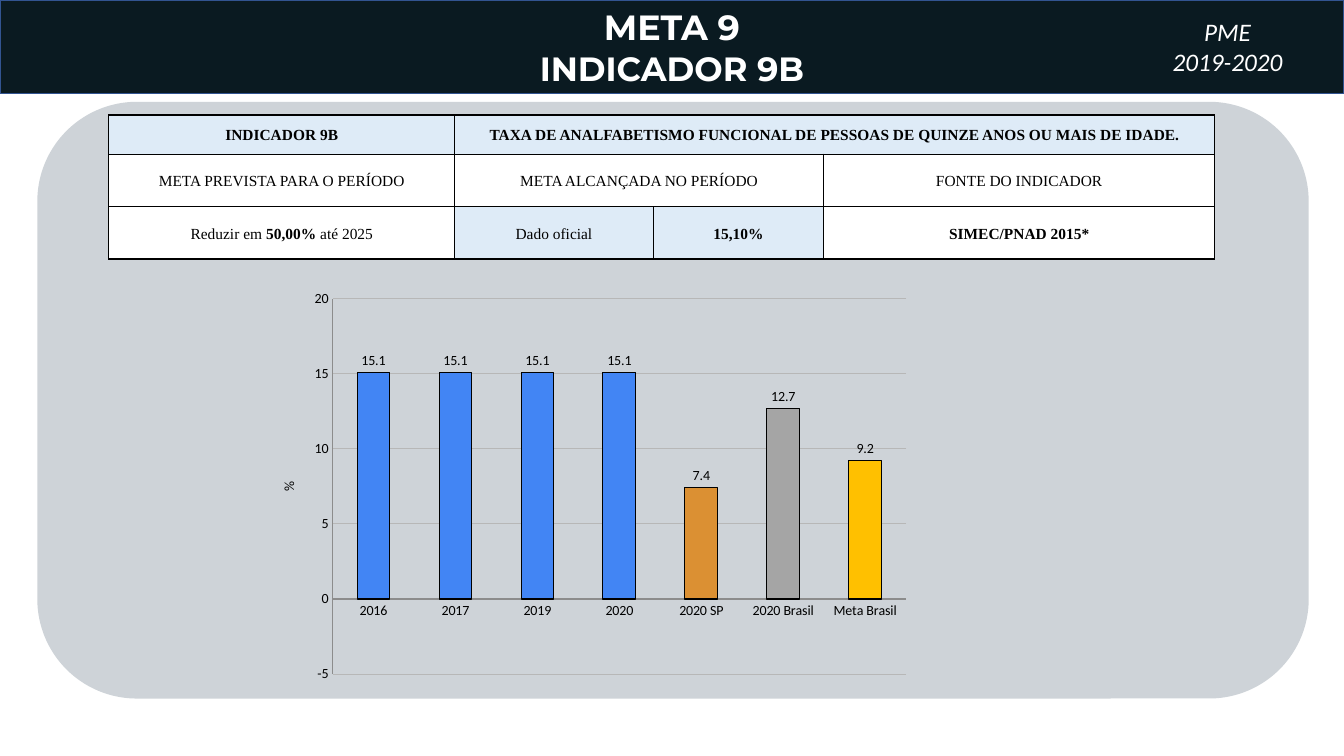
from lxml import etree
from pptx import Presentation
from pptx.chart.data import CategoryChartData
from pptx.dml.color import RGBColor
from pptx.enum.chart import XL_CHART_TYPE, XL_LABEL_POSITION, XL_TICK_MARK
from pptx.enum.shapes import MSO_SHAPE
from pptx.enum.text import MSO_ANCHOR, MSO_AUTO_SIZE, PP_ALIGN
from pptx.oxml import parse_xml
from pptx.oxml.ns import nsdecls, qn
from pptx.util import Inches, Pt

CENTER = PP_ALIGN.CENTER
MIDDLE = MSO_ANCHOR.MIDDLE
NO_TICK = XL_TICK_MARK.NONE
BLACK, WHITE, PALE_BLUE = "000000", "FFFFFF", "DEEBF7"


def paint(color_format, hex_color):
    color_format.rgb = RGBColor.from_string(hex_color)


def style_font(font, color, **values):
    for attribute, value in values.items():
        setattr(font, attribute, value)
    paint(font.color, color)


prs = Presentation()
prs.slide_width, prs.slide_height = Inches(13.33), Inches(7.5)
slide = prs.slides.add_slide(prs.slide_layouts[5])

# Header band with the title
header = slide.shapes.title
header.left, header.top = Inches(0), Inches(0)
header.width, header.height = Inches(13.33), Inches(0.93)
header.fill.solid()
paint(header.fill.fore_color, "0A1A21")
paint(header.line.color, "325491")
header.line.width = Pt(1)
heading = header.text_frame
heading.text = "META 9\nINDICADOR 9B"
heading.auto_size = MSO_AUTO_SIZE.NONE
heading.vertical_anchor = MIDDLE
for line, size in zip(heading.paragraphs, (25, 24)):
    line.alignment = CENTER
    style_font(line.runs[0].font, WHITE, name="Montserrat", size=Pt(size), bold=True)

# Grey panel
panel = slide.shapes.add_shape(MSO_SHAPE.ROUNDED_RECTANGLE, Inches(0.37), Inches(1.01),
                               Inches(12.61), Inches(5.92))
panel.shadow.inherit = False
panel.fill.solid()
paint(panel.fill.fore_color, "CED3D8")
panel.line.fill.background()

# Indicator table: (row, column, columns spanned, fill, runs as (text, bold))
indicator_cells = [
    (0, 0, 1, PALE_BLUE, [("INDICADOR 9B", True)]),
    (0, 1, 3, PALE_BLUE, [("TAXA DE ANALFABETISMO FUNCIONAL DE PESSOAS DE QUINZE ANOS "
                           "OU MAIS DE IDADE.", True)]),
    (1, 0, 1, WHITE, [("META PREVISTA PARA O PERÍODO", False)]),
    (1, 1, 2, WHITE, [("META ALCANÇADA NO PERÍODO", False)]),
    (1, 3, 1, WHITE, [("FONTE DO INDICADOR", False)]),
    (2, 0, 1, WHITE, [("Reduzir em ", False), ("50,00% ", True), ("até 2025", False)]),
    (2, 1, 1, PALE_BLUE, [("Dado oficial", False)]),
    (2, 2, 1, PALE_BLUE, [("15,10%", True)]),
    (2, 3, 1, WHITE, [("SIMEC/PNAD 2015*", True)]),
]
column_widths, row_heights = (3.43, 1.97, 1.69, 3.88), (0.39, 0.52, 0.52)
indicator = slide.shapes.add_table(3, 4, Inches(1.08), Inches(1.14),
                                   Inches(10.97), Inches(1.43)).table
indicator.first_row = indicator.horz_banding = False
for column, width in zip(indicator.columns, column_widths):
    column.width = Inches(width)
for row, height in zip(indicator.rows, row_heights):
    row.height = Inches(height)

for row, column, span, fill, runs in indicator_cells:
    cell = indicator.cell(row, column)
    if span > 1:
        cell.merge(indicator.cell(row, column + span - 1))
    cell.fill.solid()
    paint(cell.fill.fore_color, fill)
    cell.vertical_anchor = MIDDLE
    cell.margin_left = cell.margin_right = Inches(0.05)
    cell.margin_top, cell.margin_bottom = Inches(0.01), Inches(0)
    entry = cell.text_frame.paragraphs[0]
    entry.alignment, entry.line_spacing, entry.space_after = CENTER, 1.07, Pt(8)
    for text, bold in runs:
        run = entry.add_run()
        run.text = text
        style_font(run.font, BLACK, name="Times New Roman", size=Pt(11), bold=bold)

# Black borders on every cell
for cell in indicator.iter_cells():
    properties = cell._tc.get_or_add_tcPr()
    for position, side in enumerate(("lnL", "lnR", "lnT", "lnB")):
        properties.insert(position, parse_xml(
            f'<a:{side} {nsdecls("a")} w="12700"><a:solidFill>'
            f'<a:srgbClr val="{BLACK}"/></a:solidFill></a:{side}>'))

# Rate chart
rates = CategoryChartData()
rates.categories = ["2016", "2017", "2019", "2020", "2020 SP", "2020 Brasil", "Meta Brasil"]
rates.add_series("Series 1", (15.1, 15.1, 15.1, 15.1, 7.4, 12.7, 9.2))
chart = slide.shapes.add_chart(XL_CHART_TYPE.COLUMN_CLUSTERED, Inches(2.71), Inches(2.72),
                               Inches(6.54), Inches(4.05), rates).chart
chart.has_legend = chart.has_title = False
style_font(chart.font, BLACK, name="Calibri", size=Pt(10))

# Bars and their labels
bars = chart.plots[0]
bars.gap_width, bars.vary_by_categories = 150, False
bars.has_data_labels = True
bars.data_labels.show_value = True
bars.data_labels.position = XL_LABEL_POSITION.OUTSIDE_END
style_font(bars.data_labels.font, BLACK, name="Calibri", size=Pt(10))
rate_series = bars.series[0]
bar_formats = [(rate_series.format, "4285F4")]
for index, color in {4: "DB9033", 5: "A5A5A5", 6: "FFC000"}.items():
    bar_formats.append((rate_series.points[index].format, color))
for bar_format, color in bar_formats:
    bar_format.fill.solid()
    paint(bar_format.fill.fore_color, color)
    paint(bar_format.line.color, BLACK)
    bar_format.line.width = Pt(0.75)

# Axes
percent_axis = chart.value_axis
for axis in (chart.category_axis, percent_axis):
    axis.major_tick_mark = axis.minor_tick_mark = NO_TICK
    style_font(axis.tick_labels.font, BLACK, name="Calibri", size=Pt(10))
    paint(axis.format.line.color, "8C8C8C")
    axis.format.line.width = Pt(0.75)
percent_axis.minimum_scale, percent_axis.maximum_scale = -5, 20
percent_axis.major_unit = 5
gridline = percent_axis.major_gridlines.format.line
paint(gridline.color, "B7B7B7")
gridline.width = Pt(0.75)
axis_title = percent_axis.axis_title.text_frame
axis_title.text = "%"
style_font(axis_title.paragraphs[0].runs[0].font, BLACK,
           name="Calibri", size=Pt(10), bold=False)

# Inner plot area as fractions of the chart
plot_area = chart._chartSpace.chart.plotArea
for old_layout in plot_area.findall(qn("c:layout")):
    plot_area.remove(old_layout)
layout = etree.Element(qn("c:layout"))
manual = etree.SubElement(layout, qn("c:manualLayout"))
for tag, value in (("layoutTarget", "inner"), ("xMode", "edge"), ("yMode", "edge"),
                   ("x", "0.09"), ("y", "0.06"), ("w", "0.87"), ("h", "0.92")):
    etree.SubElement(manual, qn(f"c:{tag}")).set("val", value)
plot_area.insert(0, layout)

# Plan and period
period = slide.shapes.add_textbox(Inches(10.87), Inches(0.11), Inches(2.61), Inches(0.71))
period.text_frame.word_wrap = True
period.text_frame.auto_size = MSO_AUTO_SIZE.SHAPE_TO_FIT_TEXT
period.text_frame.text = "PME\n2019-2020"
for line in period.text_frame.paragraphs:
    line.alignment = CENTER
    style_font(line.runs[0].font, WHITE, name="Calibri", size=Pt(18), italic=True)

prs.save("out.pptx")
